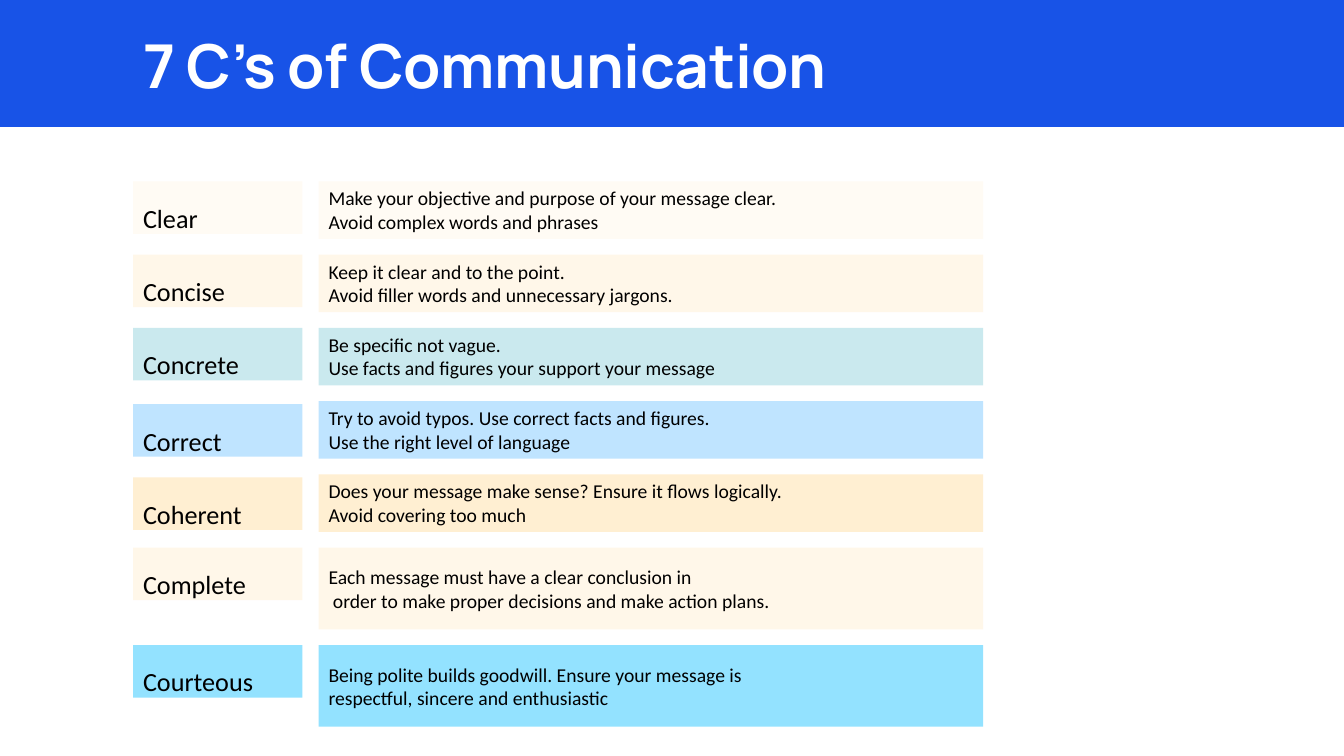
from pptx import Presentation
from pptx import util as u
from pptx.dml import color
from pptx.enum import shapes, text

HUES = {
    "blue": "1853E7", "white": "FFFFFF", "black": "000000",
    "ivory": "FFFBF4", "cream": "FFF7E9", "teal": "CAE9EE",
    "sky": "BFE4FF", "sand": "FFEFD2", "aqua": "93E2FF",
}
TALL, LOW = 0.81, 0.57
ROWS = [
    ("Clear", "ivory", LOW, 0,
     ["Make your objective and purpose of your message clear.",
      "Avoid complex words and phrases"]),
    ("Concise", "cream", LOW, 0,
     ["Keep it clear and to the point.",
      "Avoid filler words and unnecessary jargons."]),
    ("Concrete", "teal", LOW, 0,
     ["Be specific not vague.",
      "Use facts and figures your support your message"]),
    ("Correct", "sky", LOW, 0.03,
     ["Try to avoid typos. Use correct facts and figures.",
      "Use the right level of language"]),
    ("Coherent", "sand", LOW, 0.03,
     ["Does your message make sense? Ensure it flows logically.",
      "Avoid covering too much"]),
    ("Complete", "cream", TALL, 0,
     ["Each message must have a clear conclusion in",
      " order to make proper decisions and make action plans."]),
    ("Courteous", "aqua", TALL, 0,
     ["Being polite builds goodwill. Ensure your message is",
      "respectful, sincere and enthusiastic"]),
]


def rgb(hue):
    return color.RGBColor.from_string(HUES[hue])


def panel(slide, box, hue):
    shape = slide.shapes.add_shape(
        shapes.MSO_SHAPE.RECTANGLE, *map(u.Inches, box))
    shape.shadow.inherit = False
    shape.fill.solid()
    shape.fill.fore_color.rgb = rgb(hue)
    shape.line.fill.background()
    return shape


def write(shape, lines, face, size, hue, bold=False, lead=None, mid=False):
    frame = shape.text_frame
    frame.word_wrap = True
    anchor = text.MSO_ANCHOR
    frame.vertical_anchor = anchor.MIDDLE if mid else anchor.TOP
    fit = text.MSO_AUTO_SIZE
    frame.auto_size = fit.NONE if mid else fit.SHAPE_TO_FIT_TEXT
    frame.text = "\n".join(lines)
    for para in frame.paragraphs:
        para.alignment = text.PP_ALIGN.LEFT
        if lead:
            para.line_spacing = lead
        para.font.name = face
        para.font.size = u.Pt(size)
        para.font.bold = bold
        para.font.color.rgb = rgb(hue)


def header(slide, left, top, width, height):
    panel(slide, (left, top, width, height), "blue")
    title = slide.shapes.add_textbox(*map(
        u.Inches, (left + 1.32, top + 0.21, width - 2.35, height - 0.41)))
    write(title, ["7 C’s of Communication"], "Manrope", 43.2, "white",
          bold=True, mid=True)
    for run in title.text_frame.paragraphs[0].runs:
        run.font._element.set("spc", "-20")


def table(slide, left, top, width, height):
    tag, gutter = 1.68, 0.16
    gap = (height - sum(row[2] for row in ROWS)) / (len(ROWS) - 1)
    inset = tag + gutter
    for name, hue, tall, nudge, lines in ROWS:
        body = panel(slide, (left + inset, top, width - inset, tall), hue)
        write(body, lines, "Calibri", 14, "black", mid=tall == TALL)
        label = panel(slide, (left, top + nudge, tag, 0.52), hue)
        write(label, [name], "Calibri", 18.7, "black", lead=1.5)
        top += tall + gap


def main():
    deck = Presentation()
    deck.slide_width = u.Inches(13.33)
    deck.slide_height = u.Inches(7.5)
    slide = deck.slides.add_slide(deck.slide_layouts[6])
    header(slide, 0, 0, 13.33, 1.26)
    table(slide, 1.32, 1.8, 8.43, 5.41)
    deck.save("out.pptx")


if __name__ == "__main__":
    main()
